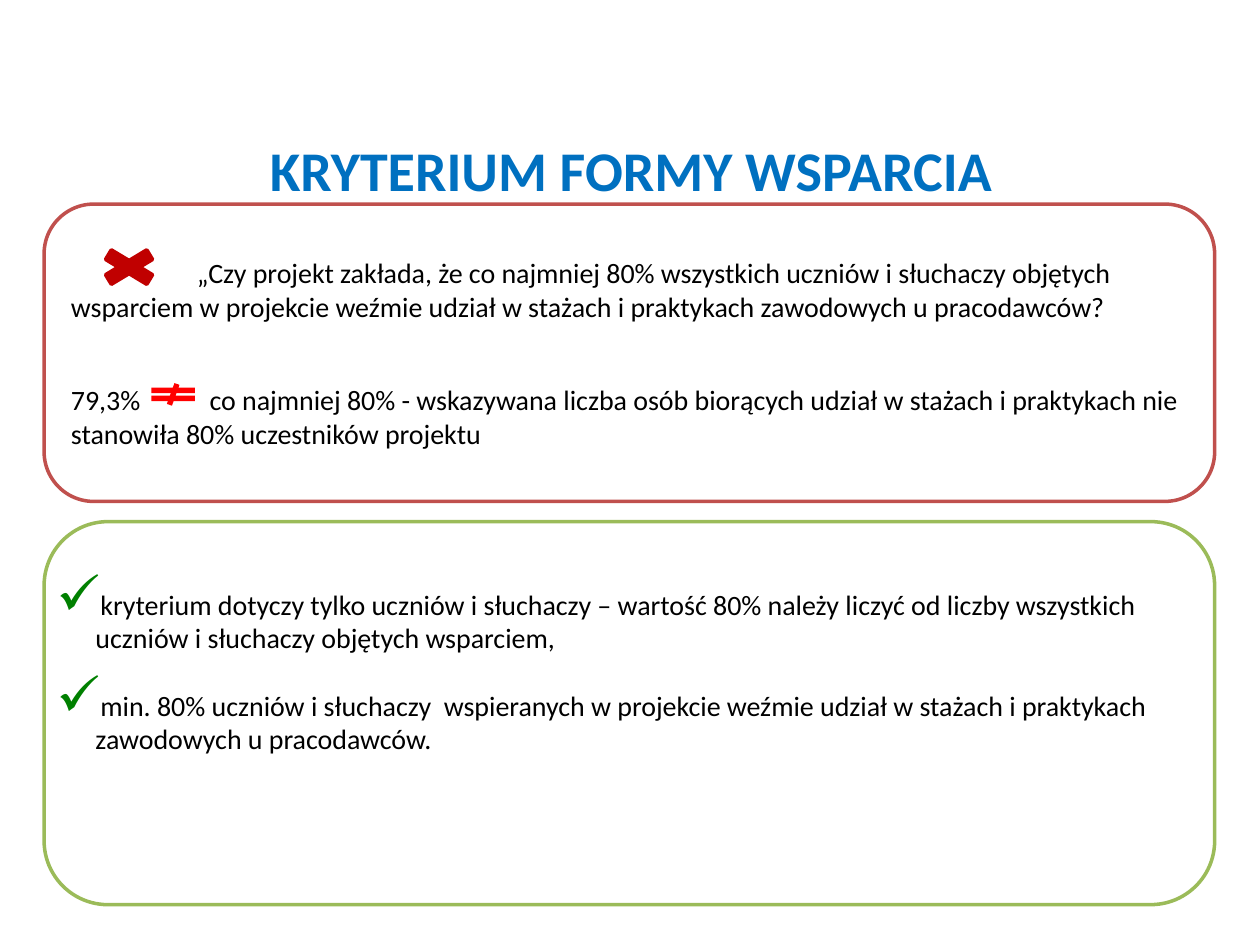
from dataclasses import dataclass

import pptx
import pptx.dml.color
import pptx.enum.shapes
import pptx.enum.text
import pptx.oxml
import pptx.oxml.ns
import pptx.util

COLORS = {
    "title": "0070C0",
    "text": "000000",
    "wrong_panel": "C0504D",
    "right_panel": "9BBB59",
    "cross": "C00000",
    "not_equal": "FF0000",
    "tick": "008000",
}
FONT = "Calibri"
SHAPES = pptx.enum.shapes.MSO_SHAPE
ANCHOR = pptx.enum.text.MSO_ANCHOR
ALIGN = pptx.enum.text.PP_ALIGN

# The slide is a grid of 100 columns and 75 rows
COLUMNS, ROWS = 100, 75
SLIDE_WIDTH, SLIDE_HEIGHT = pptx.util.Inches(10), pptx.util.Inches(7.5)


@dataclass
class Area:
    column: float
    row: float
    columns: float
    rows: float

    def lengths(self) -> list[int]:
        cell_width, cell_height = SLIDE_WIDTH / COLUMNS, SLIDE_HEIGHT / ROWS
        return [round(self.column * cell_width), round(self.row * cell_height),
                round(self.columns * cell_width), round(self.rows * cell_height)]


@dataclass
class Figure:
    kind: int
    area: Area
    fill: str | None = None
    line: str | None = None


@dataclass
class Passage:
    text: str
    size: float = 16
    color: str = "text"
    bold: bool = False
    align: int = ALIGN.LEFT
    before: float = 0
    tab: float | None = None
    tick: bool = False


def rgb(name: str) -> pptx.dml.color.RGBColor:
    return pptx.dml.color.RGBColor.from_string(COLORS[name])


def draw_figure(slide, figure: Figure):
    shape = slide.shapes.add_shape(figure.kind, *figure.area.lengths())
    shape.shadow.inherit = False
    if figure.fill:
        shape.fill.solid()
        shape.fill.fore_color.rgb = rgb(figure.fill)
    else:
        shape.fill.background()
    if figure.line:
        shape.line.color.rgb = rgb(figure.line)
        shape.line.width = pptx.util.Pt(2)
    else:
        shape.line.fill.background()
    return shape


def add_property(properties, tag: str, **attributes: str):
    element = properties.makeelement(pptx.oxml.ns.qn(tag), attributes)
    properties.append(element)
    return element


def write(frame, passages: list[Passage], anchor: int) -> None:
    frame.word_wrap = True
    frame.vertical_anchor = anchor
    for index, passage in enumerate(passages):
        paragraph = frame.paragraphs[0] if index == 0 else frame.add_paragraph()
        paragraph.alignment = passage.align
        if passage.before:
            paragraph.space_before = pptx.util.Pt(passage.before)
        properties = paragraph._p.get_or_add_pPr()
        if passage.tick:
            indent = pptx.util.Inches(0.31)
            properties.set("marL", str(indent))
            properties.set("indent", str(-indent))
            tick_color = add_property(properties, "a:buClr")
            add_property(tick_color, "a:srgbClr", val=COLORS["tick"])
            add_property(properties, "a:buSzPct", val="200000")
            add_property(properties, "a:buChar", char="✓")
        if passage.tab:
            tabs = add_property(properties, "a:tabLst")
            add_property(tabs, "a:tab", pos=str(pptx.util.Inches(passage.tab)), algn="l")
        run = paragraph.add_run()
        run.text = passage.text
        run.font.name = FONT
        run.font.size = pptx.util.Pt(passage.size)
        run.font.bold = passage.bold
        run.font.color.rgb = rgb(passage.color)


def add_text(slide, area: Area, passages: list[Passage], anchor: int):
    frame = slide.shapes.add_textbox(*area.lengths()).text_frame
    write(frame, passages, anchor)
    return frame


TITLE = [Passage("KRYTERIUM FORMY WSPARCIA", 32, "title", True, ALIGN.CENTER)]
WRONG = [
    Passage("\t„Czy projekt zakłada, że co najmniej 80% wszystkich uczniów i słuchaczy "
            "objętych wsparciem w projekcie weźmie udział w stażach i praktykach "
            "zawodowych u pracodawców?", tab=1),
    Passage("79,3%\tco najmniej 80% - wskazywana liczba osób biorących udział w stażach "
            "i praktykach nie stanowiła 80% uczestników projektu", before=34, tab=1.1),
]
RIGHT = [
    Passage("kryterium dotyczy tylko uczniów i słuchaczy – wartość 80% należy liczyć "
            "od liczby wszystkich uczniów i słuchaczy objętych wsparciem,", tick=True),
    Passage("min. 80% uczniów i słuchaczy  wspieranych w projekcie weźmie udział "
            "w stażach i praktykach zawodowych u pracodawców.", before=19.5, tick=True),
]


def main() -> None:
    deck = pptx.Presentation()
    deck.slide_width, deck.slide_height = SLIDE_WIDTH, SLIDE_HEIGHT
    slide = deck.slides.add_slide(deck.slide_layouts[6])

    # Panel with the mistake
    wrong_panel = draw_figure(slide, Figure(
        SHAPES.ROUNDED_RECTANGLE, Area(3.5, 16.2, 92.9, 23.6), line="wrong_panel"))
    write(wrong_panel.text_frame, WRONG, ANCHOR.MIDDLE)

    # Title
    add_text(slide, Area(5.1, 10.7, 90, 5.5), TITLE, ANCHOR.MIDDLE)

    # Panel with the correct reading
    draw_figure(slide, Figure(
        SHAPES.ROUNDED_RECTANGLE, Area(3.5, 41.4, 92.9, 30.4), line="right_panel"))
    advice = add_text(slide, Area(3.5, 43, 91.6, 17.5), RIGHT, ANCHOR.TOP)
    advice.margin_top = pptx.util.Inches(0.36)

    # Marks beside the mistake
    draw_figure(slide, Figure(
        SHAPES.MATH_MULTIPLY, Area(7.1, 19.3, 6.3, 3.8), "cross", "cross"))
    draw_figure(slide, Figure(
        SHAPES.MATH_NOT_EQUAL, Area(11.4, 30.4, 4.7, 1.8), "not_equal"))

    deck.save("out.pptx")


if __name__ == "__main__":
    main()
